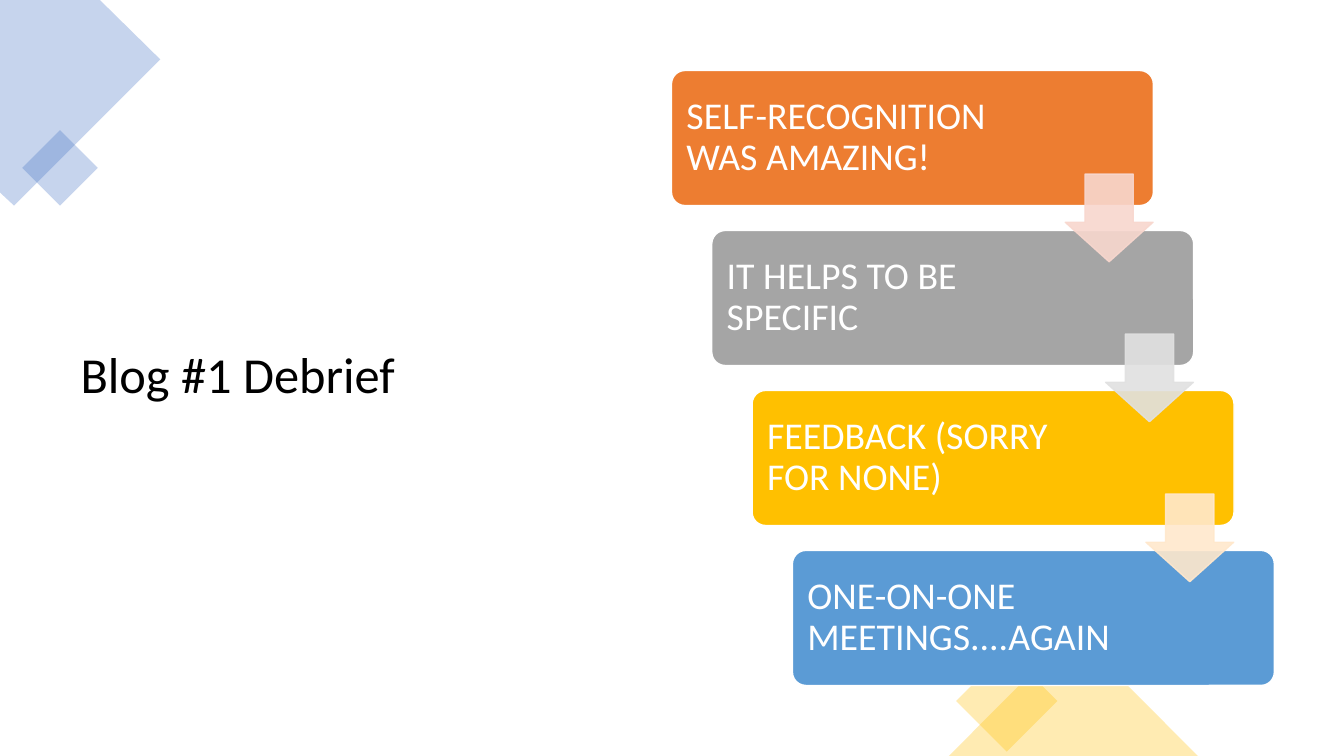
from lxml.etree import SubElement
from pptx import Presentation
from pptx.dml.color import RGBColor
from pptx.enum.shapes import MSO_SHAPE
from pptx.enum.text import MSO_ANCHOR, PP_ALIGN
from pptx.oxml.ns import qn
from pptx.util import Inches, Pt

BLACK = RGBColor(0x00, 0x00, 0x00)
WHITE = RGBColor(0xFF, 0xFF, 0xFF)
INDIGO = RGBColor(0x44, 0x72, 0xC4)
ORANGE = RGBColor(0xED, 0x7D, 0x31)
GRAY = RGBColor(0xA5, 0xA5, 0xA5)
GOLD = RGBColor(0xFF, 0xC0, 0x00)
BLUE = RGBColor(0x5B, 0x9B, 0xD5)
PALE_ORANGE = RGBColor(0xF8, 0xD7, 0xCE)
PALE_GRAY = RGBColor(0xE1, 0xE1, 0xE1)
PALE_GOLD = RGBColor(0xFF, 0xE8, 0xCC)

STEPS = [
    ("SELF-RECOGNITION WAS AMAZING!", ORANGE),
    ("IT HELPS TO BE SPECIFIC", GRAY),
    ("FEEDBACK (SORRY FOR NONE)", GOLD),
    ("ONE-ON-ONE MEETINGS....AGAIN", BLUE),
]
ARROW_COLORS = [PALE_ORANGE, PALE_GRAY, PALE_GOLD]
STEP_RIGHT, STEP_DOWN = 3, 21.16


class DebriefSlide:
    """Draws styled elements on one slide, with lengths in percent of its size."""

    font_name = "Calibri"

    def __init__(self, presentation):
        self.width = presentation.slide_width
        self.height = presentation.slide_height
        self.slide = presentation.slides.add_slide(presentation.slide_layouts[6])

    def frame(self, left, top, width, height):
        return (
            round(left * self.width / 100),
            round(top * self.height / 100),
            round(width * self.width / 100),
            round(height * self.height / 100),
        )

    def paint(self, shape, fill, line=None, opacity=100):
        shape.shadow.inherit = False
        shape.fill.solid()
        shape.fill.fore_color.rgb = fill
        if line is None:
            shape.line.fill.background()
        else:
            shape.line.color.rgb = line
            shape.line.width = Pt(1)
        if opacity < 100:
            for color in shape.element.spPr.iter(qn("a:srgbClr")):
                SubElement(color, qn("a:alpha"), val=str(opacity * 1000))

    def set_text(self, shape, text, size, color):
        text_frame = shape.text_frame
        text_frame.text = text
        text_frame.word_wrap = True
        text_frame.vertical_anchor = MSO_ANCHOR.MIDDLE
        paragraph = text_frame.paragraphs[0]
        paragraph.alignment = PP_ALIGN.LEFT
        paragraph.line_spacing = 0.9
        font = paragraph.runs[0].font
        font.name = self.font_name
        font.size = Pt(size)
        font.color.rgb = color

    def title(self, text, *place):
        shape = self.slide.shapes.add_textbox(*self.frame(*place))
        self.set_text(shape, text, 36, BLACK)

    def accent(self, kind, color, *place, rotation=0):
        shape = self.slide.shapes.add_shape(kind, *self.frame(*place))
        shape.rotation = rotation
        self.paint(shape, color, opacity=30)

    def corner(self, color, points):
        start, *others = [self.frame(x, y, 0, 0)[:2] for x, y in points]
        builder = self.slide.shapes.build_freeform(*start)
        builder.add_line_segments(others, close=True)
        self.paint(builder.convert_to_shape(), color, opacity=30)

    def step(self, text, color, *place):
        shape = self.slide.shapes.add_shape(
            MSO_SHAPE.ROUNDED_RECTANGLE, *self.frame(*place))
        shape.adjustments[0] = 0.1
        self.paint(shape, color, WHITE)
        self.set_text(shape, text, 27, WHITE)
        shape.text_frame.margin_left = Inches(0.11)
        shape.text_frame.margin_right = Inches(1.38)

    def arrow(self, color, *place):
        shape = self.slide.shapes.add_shape(MSO_SHAPE.DOWN_ARROW, *self.frame(*place))
        shape.adjustments[0] = 0.55
        shape.adjustments[1] = 0.45
        self.paint(shape, color, color, opacity=90)


def main():
    presentation = Presentation()
    presentation.slide_width = Inches(13.33)
    presentation.slide_height = Inches(7.5)
    debrief = DebriefSlide(presentation)

    debrief.title("Blog #1 Debrief", 5.25, 9.33, 39.38, 81.2)
    debrief.corner(
        INDIGO, [(0, 0), (7.43, 0), (11.93, 7.87), (1.05, 27.2), (0, 25.47)])
    debrief.accent(MSO_SHAPE.RECTANGLE, INDIGO, 2.48, 18.67, 3.98, 7.07, rotation=45)
    debrief.accent(MSO_SHAPE.RECTANGLE, GOLD, 72.24, 88, 5.33, 9.47, rotation=45)
    debrief.accent(MSO_SHAPE.ISOSCELES_TRIANGLE, GOLD, 70.6, 83.47, 18.53, 16.53)

    for index, (text, color) in enumerate(STEPS):
        debrief.step(text, color, 49.96 + index * STEP_RIGHT,
                     9.33 + index * STEP_DOWN, 35.86, 17.87)
    for index, color in enumerate(ARROW_COLORS):
        debrief.arrow(color, 79.26 + index * STEP_RIGHT,
                      23.03 + index * STEP_DOWN, 6.53, 11.6)

    presentation.save("out.pptx")


if __name__ == "__main__":
    main()
